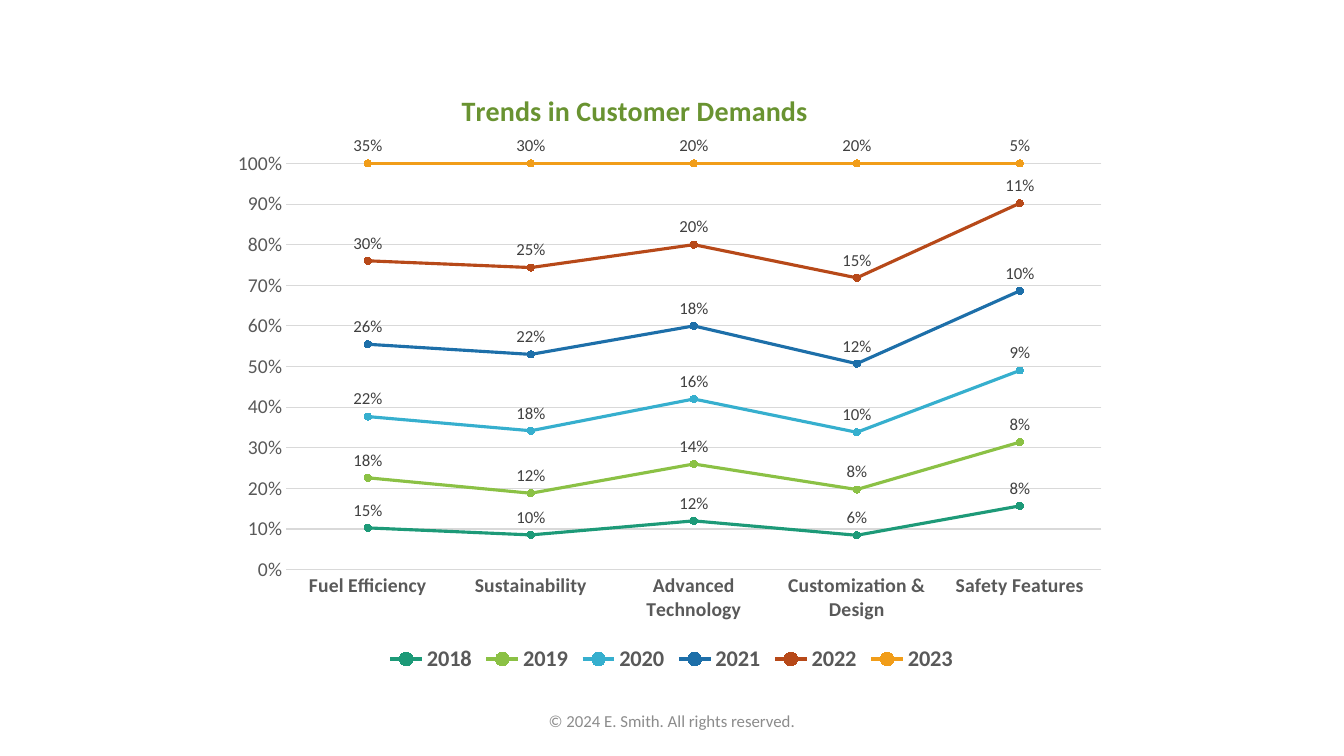
from lxml import etree
from pptx import Presentation
from pptx.chart.data import CategoryChartData
from pptx.dml.color import RGBColor
from pptx.enum.chart import (XL_CHART_TYPE, XL_LABEL_POSITION,
                             XL_LEGEND_POSITION, XL_MARKER_STYLE, XL_TICK_MARK)
from pptx.enum.text import MSO_ANCHOR, PP_ALIGN
from pptx.oxml.ns import qn
from pptx.util import Pt

LINES = XL_CHART_TYPE.LINE_MARKERS_STACKED_100
ABOVE = XL_LABEL_POSITION.ABOVE
BOTTOM = XL_LEGEND_POSITION.BOTTOM
CIRCLE = XL_MARKER_STYLE.CIRCLE
NO_TICK = XL_TICK_MARK.NONE
MIDDLE = MSO_ANCHOR.MIDDLE
CENTER = PP_ALIGN.CENTER

PX = 9525  # EMU, 96 px to the inch
FACE = "Calibri"
COLORS = {
    "title": "699331", "axis": "595959", "grid": "D9D9D9",
    "label": "404040", "note": "8C8C8C", "base": "000000",
    "2018": "1D9A78", "2019": "8BC145", "2020": "36AFCE",
    "2021": "1D6FA9", "2022": "B74919", "2023": "F19D19",
}
DEMANDS = ["Fuel Efficiency", "Sustainability", "Advanced Technology",
           "Customization & Design", "Safety Features"]
YEARS = {
    "2018": [0.15, 0.10, 0.12, 0.06, 0.08],
    "2019": [0.18, 0.12, 0.14, 0.08, 0.08],
    "2020": [0.22, 0.18, 0.16, 0.10, 0.09],
    "2021": [0.26, 0.22, 0.18, 0.12, 0.10],
    "2022": [0.30, 0.25, 0.20, 0.15, 0.11],
    "2023": [0.35, 0.30, 0.20, 0.20, 0.05],
}


def rgb(name):
    return RGBColor.from_string(COLORS[name])


def style(font, size, color, bold=False):
    font.name = FACE
    font.size = Pt(size)
    font.bold = bold
    font.color.rgb = rgb(color)


def stroke(line, color, width):
    line.color.rgb = rgb(color)
    line.width = Pt(width)


def place(part, **spots):
    """Fix a chart part at fractions of the chart, such as x=0.1."""
    layout = part.find(qn("c:layout"))
    if layout is None:
        layout = etree.Element(qn("c:layout"))
        part.insert(0, layout)
    manual = etree.SubElement(layout, qn("c:manualLayout"))
    if "w" in spots:
        etree.SubElement(manual, qn("c:layoutTarget")).set("val", "inner")
    for key in "xy":
        etree.SubElement(manual, qn(f"c:{key}Mode")).set("val", "edge")
    for key, value in spots.items():
        etree.SubElement(manual, qn(f"c:{key}")).set("val", str(value))


def set_title(chart, text):
    para = chart.chart_title.text_frame.paragraphs[0]
    run = para.add_run()
    run.text = text
    style(run.font, 20, "title", True)
    place(chart.chart_title._element, x=0.26, y=0.01)


def set_axes(chart):
    cats, vals = chart.category_axis, chart.value_axis
    for axis in (cats, vals):
        axis.major_tick_mark = axis.minor_tick_mark = NO_TICK
        style(axis.tick_labels.font, 14, "axis", axis is cats)
    stroke(cats.format.line, "grid", 0.75)
    vals.format.line.fill.background()
    vals.minimum_scale, vals.maximum_scale, vals.major_unit = 0, 1, 0.1
    vals.has_major_gridlines = True
    stroke(vals.major_gridlines.format.line, "grid", 0.75)
    vals.tick_labels.number_format = "0%"
    vals.tick_labels.number_format_is_linked = False


def set_series(year):
    year.smooth = False
    stroke(year.format.line, year.name, 2.25)
    mark = year.marker
    mark.style, mark.size = CIRCLE, 5
    mark.format.fill.solid()
    mark.format.fill.fore_color.rgb = rgb(year.name)
    stroke(mark.format.line, year.name, 0.75)
    labels = year.data_labels
    labels.show_value = True
    labels.position = ABOVE
    labels.number_format = "0%"
    labels.number_format_is_linked = False
    style(labels.font, 12, "label")


def add_trends(slide, x, y, w, h):
    data = CategoryChartData(number_format="0%")
    data.categories = DEMANDS
    for name, shares in YEARS.items():
        data.add_series(name, shares)
    frame = slide.shapes.add_chart(LINES, x * PX, y * PX, w * PX, h * PX, data)
    chart = frame.chart
    style(chart.font, 10, "base")
    set_title(chart, "Trends in Customer Demands")
    set_axes(chart)
    plot = chart.plots[0]
    plot.vary_by_categories = False
    for year in plot.series:
        set_series(year)
    area = chart._chartSpace.find(".//" + qn("c:plotArea"))
    place(area, x=0.07, y=0.14, w=0.91, h=0.68)
    chart.has_legend = True
    chart.legend.position = BOTTOM
    chart.legend.include_in_layout = False
    style(chart.legend.font, 16, "axis", True)


def add_footer(slide, x, y, w, h):
    box = slide.shapes.add_textbox(x * PX, y * PX, w * PX, h * PX)
    frame = box.text_frame
    frame.word_wrap = True
    frame.vertical_anchor = MIDDLE
    para = frame.paragraphs[0]
    para.alignment = CENTER
    run = para.add_run()
    run.text = "© 2024 E. Smith. All rights reserved."
    style(run.font, 12, "note")


def main():
    deck = Presentation()
    deck.slide_width, deck.slide_height = 1280 * PX, 720 * PX
    slide = deck.slides.add_slide(deck.slide_layouts[6])
    add_trends(slide, 213, 76, 853, 569)
    add_footer(slide, 424, 667, 432, 38)
    deck.save("out.pptx")


if __name__ == "__main__":
    main()
